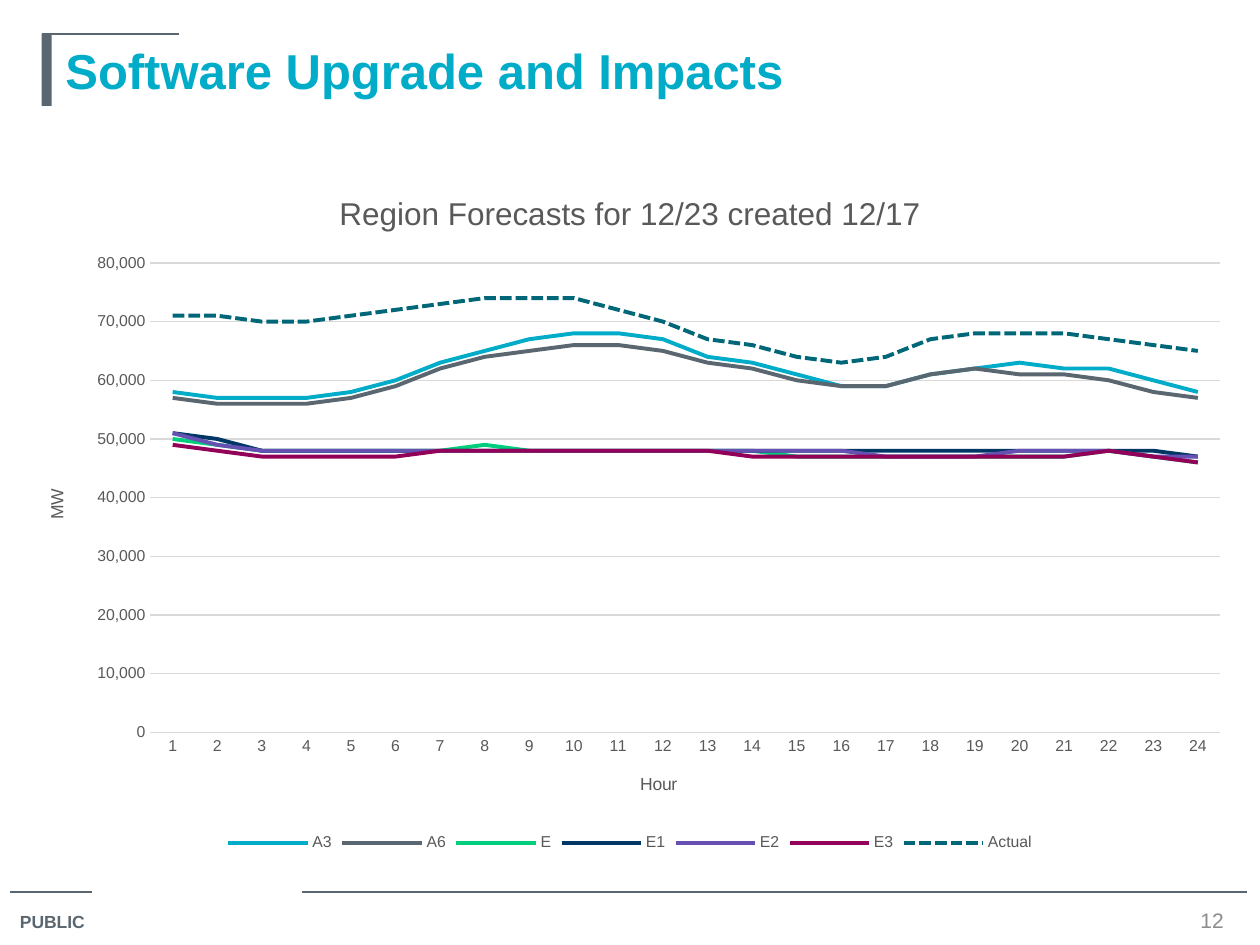
from dataclasses import dataclass

from lxml.etree import SubElement
from pptx import Presentation
from pptx.chart.data import CategoryChartData
from pptx.dml.color import RGBColor
from pptx.enum.chart import XL_CHART_TYPE as ChartType
from pptx.enum.chart import XL_LEGEND_POSITION as LegendPosition
from pptx.enum.chart import XL_TICK_MARK as TickMark
from pptx.enum.dml import MSO_LINE as Dash
from pptx.enum.shapes import MSO_CONNECTOR as Connector
from pptx.enum.shapes import MSO_SHAPE as Shape
from pptx.enum.text import MSO_ANCHOR as Anchor
from pptx.enum.text import PP_ALIGN as Align
from pptx.oxml.ns import qn
from pptx.util import Inches, Pt


@dataclass(frozen=True)
class Theme:
    font: str = "Arial"
    accent: str = "00ACC8"
    slate: str = "5B6770"
    chart_text: str = "595959"
    grid: str = "D9D9D9"
    page_number: str = "8C8C8C"
    title_size: float = 28
    chart_title_size: float = 18
    number_size: float = 12
    label_size: float = 10
    tick_size: float = 9
    hairline: float = 0.75
    series_line: float = 2.25


THEME = Theme()


@dataclass(frozen=True)
class Box:
    left: float
    top: float
    width: float
    height: float

    def inner(self, left, top, width, height):
        """Return an inner box given in percent of this one."""
        return Box(self.left + self.width * left / 100,
                   self.top + self.height * top / 100,
                   self.width * width / 100,
                   self.height * height / 100)

    def frame(self):
        return [Inches(n) for n in (self.left, self.top, self.width, self.height)]


SLIDE = Box(0, 0, 10, 7.5)

# Hourly load in thousands of MW: name, colour, values
FORECASTS = [
    ("A3", THEME.accent, [58, 57, 57, 57, 58, 60, 63, 65, 67, 68, 68, 67,
                          64, 63, 61, 59, 59, 61, 62, 63, 62, 62, 60, 58]),
    ("A6", THEME.slate, [57, 56, 56, 56, 57, 59, 62, 64, 65, 66, 66, 65,
                         63, 62, 60, 59, 59, 61, 62, 61, 61, 60, 58, 57]),
    ("E", "00CE7D", [50, 49, 48, 48, 48, 48, 48, 49, 48, 48, 48, 48,
                     48, 48, 47, 47, 47, 47, 47, 47, 47, 48, 47, 46]),
    ("E1", "003764", [51, 50] + [48] * 21 + [47]),
    ("E2", "6650B1", [51, 49] + [48] * 14 + [47, 47, 47, 48, 48, 48, 47, 47]),
    ("E3", "910258", [49, 48, 47, 47, 47, 47, 48, 48, 48, 48, 48, 48,
                      48, 47, 47, 47, 47, 47, 47, 47, 47, 48, 47, 46]),
    ("Actual", "006778", [71, 71, 70, 70, 71, 72, 73, 74, 74, 74, 72, 70,
                          67, 66, 64, 63, 64, 67, 68, 68, 68, 67, 66, 65]),
]


def style_font(font, size, color, bold=False):
    font.name = THEME.font
    font.size = Pt(size)
    font.bold = bold
    font.color.rgb = RGBColor.from_string(color)


def style_line(line, color, width):
    line.color.rgb = RGBColor.from_string(color)
    line.width = Pt(width)


def add_rule(page, box):
    left, top, width, _ = box.frame()
    rule = page.shapes.add_connector(Connector.STRAIGHT, left, top, left + width, top)
    style_line(rule.line, THEME.slate, THEME.hairline)
    SubElement(rule.element.spPr, qn("a:effectLst"))


def add_label(page, box, text, size, color, bold=False, align=Align.LEFT):
    frame = page.shapes.add_textbox(*box.frame()).text_frame
    frame.word_wrap = True
    frame.vertical_anchor = Anchor.MIDDLE
    para = frame.paragraphs[0]
    para.text = text
    para.alignment = align
    style_font(para.font, size, color, bold)


def add_header(page, box, text):
    bar = page.shapes.add_shape(Shape.RECTANGLE, *box.inner(0, 0, 0.86, 100).frame())
    bar.shadow.inherit = False
    bar.fill.solid()
    bar.fill.fore_color.rgb = RGBColor.from_string(THEME.slate)
    bar.line.fill.background()
    add_rule(page, box.inner(0, 0, 11.7, 0))

    title = page.shapes.title
    title.left, title.top, title.width, title.height = box.inner(0.96, 0, 99.04, 100).frame()
    title.text_frame.vertical_anchor = Anchor.MIDDLE
    para = title.text_frame.paragraphs[0]
    para.text = text
    para.alignment = Align.LEFT
    style_font(para.font, THEME.title_size, THEME.accent, bold=True)


def add_footer(page, box, label, number):
    add_rule(page, box.inner(0.2, 0, 6.6, 0))
    add_rule(page, box.inner(23.76, 0, 76.14, 0))
    add_label(page, box.inner(0, 24, 7.82, 75), label,
              THEME.label_size, THEME.slate, bold=True)
    add_label(page, box.inner(94.11, 27, 5.89, 64), number,
              THEME.number_size, THEME.page_number, align=Align.CENTER)


def set_title(title, text, size):
    """Fill the title of a chart or of an axis."""
    para = title.text_frame.paragraphs[0]
    para.text = text
    style_font(para.font, size, THEME.chart_text)


def set_plot_layout(chart, **shares):
    """Fix the inner plot area as shares of the chart's size."""
    area = chart.element.chart.plotArea
    for old in area.findall(qn("c:layout")):
        area.remove(old)
    layout = SubElement(area, qn("c:layout"))
    area.insert(0, layout)
    manual = SubElement(layout, qn("c:manualLayout"))
    settings = {"layoutTarget": "inner", "xMode": "edge", "yMode": "edge", **shares}
    for name, value in settings.items():
        SubElement(manual, qn(f"c:{name}")).set("val", str(value))


def add_forecast_chart(page, box, title):
    data = CategoryChartData(number_format="#,##0")
    data.categories = [str(hour) for hour in range(1, 25)]
    for name, _, values in FORECASTS:
        data.add_series(name, [value * 1000 for value in values])
    chart = page.shapes.add_chart(ChartType.LINE, *box.frame(), data).chart
    style_font(chart.font, THEME.tick_size, THEME.chart_text)
    set_title(chart.chart_title, title, THEME.chart_title_size)
    set_plot_layout(chart, x=0.11, y=0.14, w=0.87, h=0.68)

    chart.has_legend = True
    chart.legend.position = LegendPosition.BOTTOM
    chart.legend.include_in_layout = False
    style_font(chart.legend.font, THEME.tick_size, THEME.chart_text)

    hours, load = chart.category_axis, chart.value_axis
    for axis, name in ((hours, "Hour"), (load, "MW")):
        set_title(axis.axis_title, name, THEME.label_size)
        axis.major_tick_mark = axis.minor_tick_mark = TickMark.NONE
        style_font(axis.tick_labels.font, THEME.tick_size, THEME.chart_text)
    style_line(hours.format.line, THEME.grid, THEME.hairline)
    load.minimum_scale, load.maximum_scale, load.major_unit = 0, 80000, 10000
    load.format.line.fill.background()
    style_line(load.major_gridlines.format.line, THEME.grid, THEME.hairline)
    load.tick_labels.number_format = "#,##0"
    load.tick_labels.number_format_is_linked = False

    plot = chart.plots[0]
    plot.vary_by_categories = False
    for series, (name, color, _) in zip(plot.series, FORECASTS):
        series.smooth = False
        style_line(series.format.line, color, THEME.series_line)
        if name == "Actual":
            series.format.line.dash_style = Dash.SQUARE_DOT


def main():
    deck = Presentation()
    deck.slide_width, deck.slide_height = Inches(SLIDE.width), Inches(SLIDE.height)
    page = deck.slides.add_slide(deck.slide_layouts[5])
    add_footer(page, SLIDE.inner(0.6, 94.4, 98.5, 5), "PUBLIC", "12")
    add_header(page, SLIDE.inner(3.3, 3.6, 93.4, 7.6), "Software Upgrade and Impacts")
    add_forecast_chart(page, SLIDE.inner(1.2, 17.6, 97.6, 73.07),
                       "Region Forecasts for 12/23 created 12/17")
    deck.save("out.pptx")


if __name__ == "__main__":
    main()
